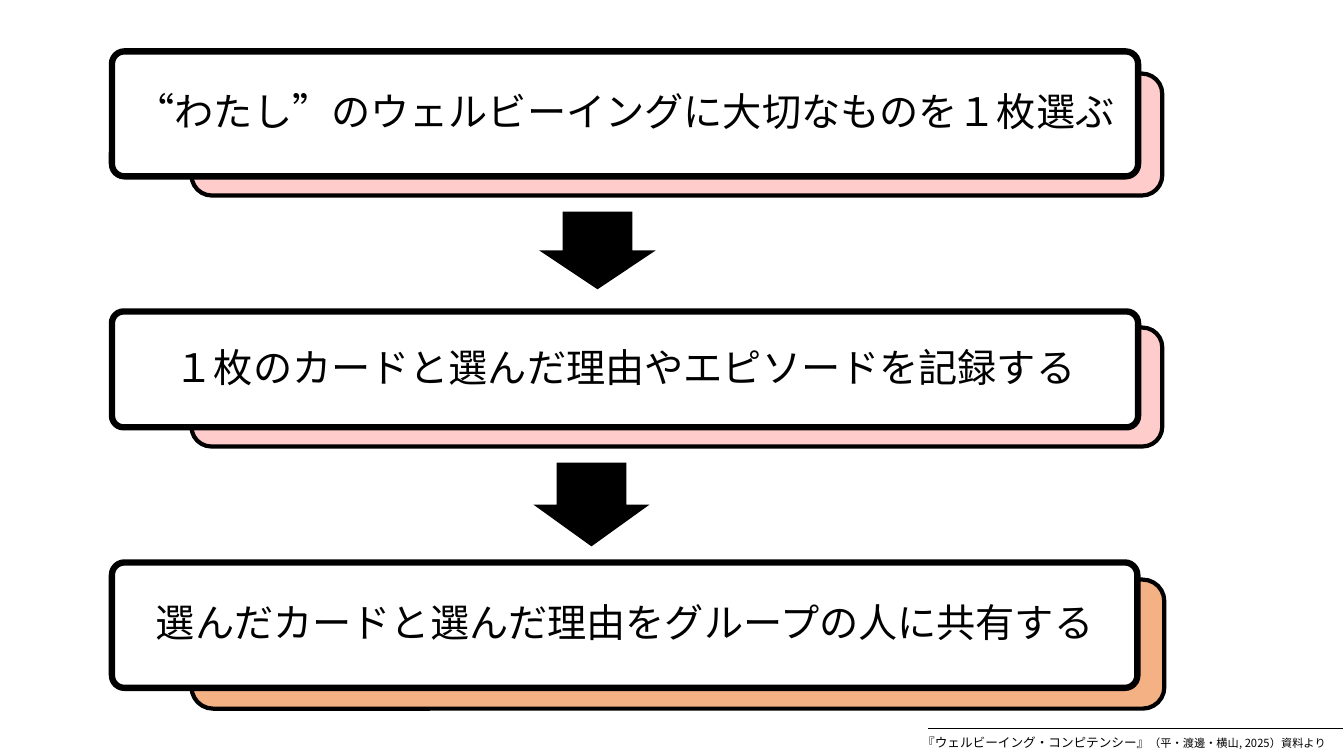
"""Build a slide with three stacked steps joined by block arrows."""
from dataclasses import dataclass
from typing import Optional

from lxml.etree import SubElement
from pptx import Presentation
from pptx.dml.color import RGBColor
from pptx.enum.shapes import MSO_CONNECTOR as Connector, MSO_SHAPE as Shape
from pptx.enum.text import MSO_ANCHOR as Anchor, PP_ALIGN as Align
from pptx.oxml.ns import qn
from pptx.util import Inches, Pt

FONT = "Noto Sans CJK JP"
COLORS = {"ink": "000000", "card": "FFFFFF", "pink": "FFCCCC", "orange": "F4B183"}
W, H = Inches(13.33), Inches(7.5)


@dataclass(frozen=True)
class Box:
    """Hold a position and size in percent of the slide."""
    left: float
    top: float
    width: float
    height: float

    def emu(self) -> tuple[int, int, int, int]:
        """Return left, top, width and height in EMU."""
        return (int(W * self.left / 100), int(H * self.top / 100),
                int(W * self.width / 100), int(H * self.height / 100))


@dataclass(frozen=True)
class Step:
    """Describe a card, the panel behind it and the arrow below it."""
    text: str
    card: Box
    panel: Box
    color: str
    inset: float
    arrow: Optional[Box] = None


STEPS = (
    Step("“わたし”のウェルビーイングに大切なものを１枚選ぶ",
         Box(8.33, 6.8, 76.35, 16.53), Box(14.25, 9.73, 72.23, 16.13),
         "pink", 0.14, Box(40.13, 28, 8.66, 10.27)),
    Step("１枚のカードと選んだ理由やエピソードを記録する",
         Box(8.33, 41.2, 76.35, 15.33), Box(14.25, 43.33, 72.23, 15.73),
         "pink", 0.13, Box(39.68, 61.2, 8.66, 11.07)),
    Step("選んだカードと選んだ理由をグループの人に共有する",
         Box(8.33, 74.4, 76.3, 16.6), Box(14.25, 76.67, 72.38, 17.07),
         "orange", 0.14),
)
SOURCE = (("『ウェルビーイング・コンピテンシー』", 9),
          ("（平・渡邊・横山, 2025）資料より", 8))


def rgb(name: str) -> RGBColor:
    """Look up a named colour."""
    return RGBColor.from_string(COLORS[name])


def add_run(p, text: str, *, size: float, color: str = "ink") -> None:
    """Append a formatted run to a paragraph."""
    r = p.add_run()
    r.text = text
    r.font.size = Pt(size)
    r.font.name = FONT
    r.font.color.rgb = rgb(color)
    SubElement(r.font._element, qn("a:ea"), typeface=FONT)


def add_block(s, kind: Shape, box: Box, fill: str, line: float = 0):
    """Draw a filled preset shape, outlined when a line width is given."""
    sp = s.shapes.add_shape(kind, *box.emu())
    sp.shadow.inherit = False
    sp.fill.solid()
    sp.fill.fore_color.rgb = rgb(fill)
    if line:
        sp.line.color.rgb = rgb("ink")
        sp.line.width = Pt(line)
    else:
        sp.line.fill.background()
    return sp


def add_step(s, step: Step) -> None:
    """Draw one step from back to front."""
    add_block(s, Shape.ROUNDED_RECTANGLE, step.panel, step.color, 3)
    sp = add_block(s, Shape.ROUNDED_RECTANGLE, step.card, "card", 4.5)
    sp.adjustments[0] = 0.1
    tf = sp.text_frame
    tf.word_wrap = True
    tf.vertical_anchor = Anchor.MIDDLE
    tf.margin_left = tf.margin_right = Inches(step.inset)
    tf.margin_top = tf.margin_bottom = Inches(step.inset)
    p = tf.paragraphs[0]
    p.alignment = Align.CENTER
    p.line_spacing = 0.9
    p.space_after = Pt(9.8)
    add_run(p, step.text, size=28)
    if step.arrow:
        arrow = add_block(s, Shape.DOWN_ARROW, step.arrow, "ink")
        arrow.adjustments[0] = 0.6


def add_source(s) -> None:
    """Add the source note and the rule above it."""
    tf = s.shapes.add_textbox(*Box(67.88, 96.53, 32.03, 3.33).emu()).text_frame
    tf.word_wrap = True
    for text, size in SOURCE:
        add_run(tf.paragraphs[0], text, size=size)
    left, top, width, _ = Box(69.08, 96.4, 30.82, 0).emu()
    rule = s.shapes.add_connector(Connector.STRAIGHT, left, top, left + width, top)
    rule.line.color.rgb = rgb("ink")
    rule.line.width = Pt(0.5)
    SubElement(rule._element.spPr, qn("a:effectLst"))


def main() -> None:
    """Create and save the presentation."""
    prs = Presentation()
    prs.slide_width, prs.slide_height = W, H
    s = prs.slides.add_slide(prs.slide_layouts[6])
    add_source(s)
    for step in STEPS:
        add_step(s, step)
    prs.save("out.pptx")


if __name__ == "__main__":
    main()
